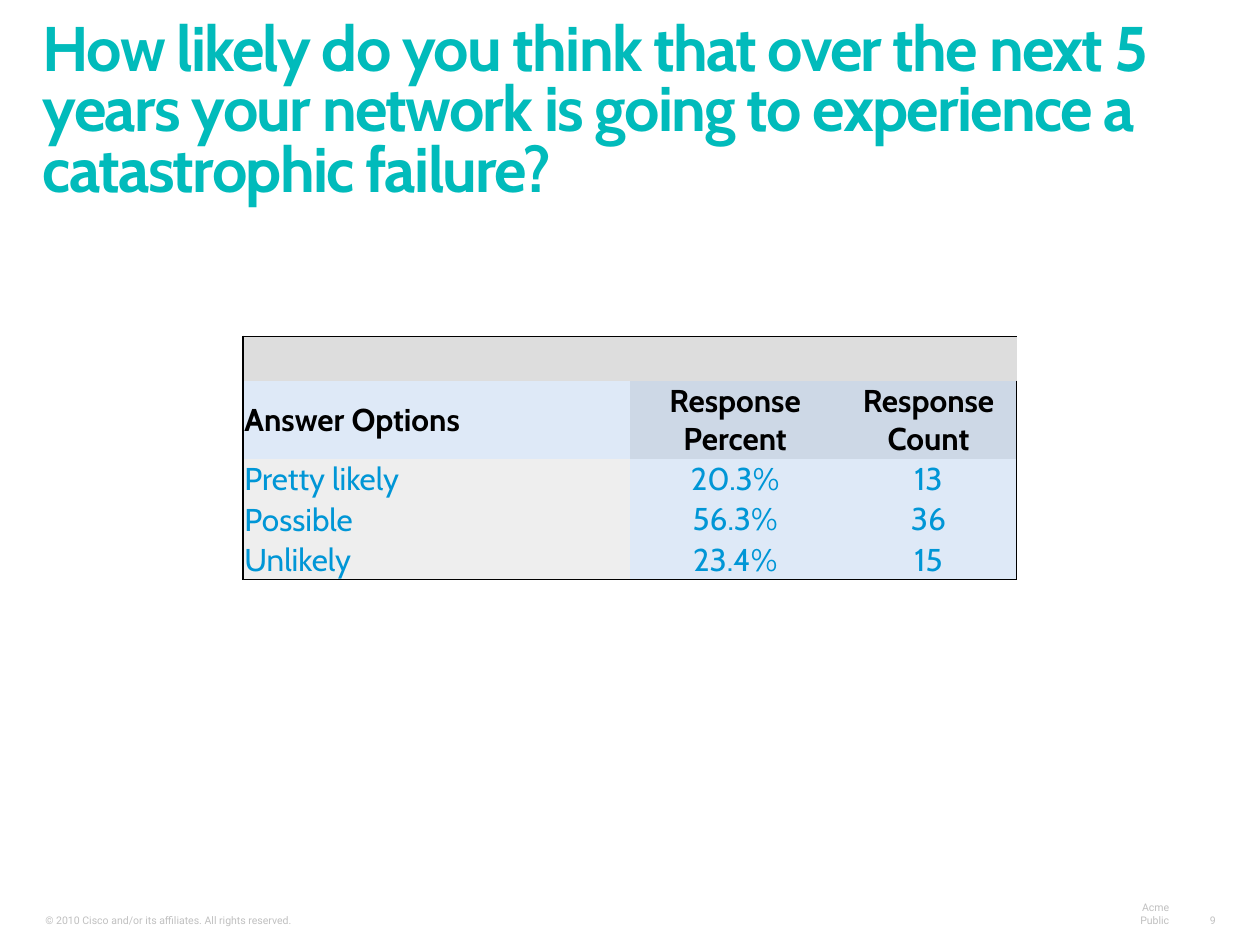
from pptx import Presentation
from pptx.dml.color import RGBColor
from pptx.enum.text import MSO_ANCHOR, PP_ALIGN
from pptx.oxml.ns import qn
from pptx.util import Inches, Pt
from lxml import etree

BOTTOM, MIDDLE = MSO_ANCHOR.BOTTOM, MSO_ANCHOR.MIDDLE
LEFT, CENTER, RIGHT = PP_ALIGN.LEFT, PP_ALIGN.CENTER, PP_ALIGN.RIGHT

TEAL = RGBColor(0x01, 0xBB, 0xBB)
BLUE = RGBColor(0x00, 0x96, 0xD6)
BLACK = RGBColor(0x00, 0x00, 0x00)
SILVER = RGBColor(0xC0, 0xC0, 0xC0)
BAND_GRAY = RGBColor(0xDD, 0xDD, 0xDD)
LABEL_GRAY = RGBColor(0xEE, 0xEE, 0xEE)
PALE_BLUE = RGBColor(0xDE, 0xE9, 0xF7)
HEADER_BLUE = RGBColor(0xCD, 0xD8, 0xE6)

TITLE = ("How likely do you think that over the next 5 years your network "
         "is going to experience a catastrophic failure?")
TITLE_FONT = {"name": "Cabin", "size": Pt(36), "bold": True}
FOOTER_FONT = {"name": "Roboto", "size": Pt(6)}
HEADER_FONT = {"name": "Cabin", "size": Pt(18), "bold": True}
BODY_FONT = {**HEADER_FONT, "bold": False}

FOOTERS = [
    (0.27, 3.6, "© 2010 Cisco and/or its affiliates. All rights reserved.", LEFT, True),
    (8.73, 0.64, "Acme Public", RIGHT, False),
    (9.46, 0.28, "9", RIGHT, False),
]
COLUMN_WIDTHS = [3.07, 1.67, 1.4]
ROW_HEIGHTS = [0.35, 0.62, 0.32, 0.32, 0.32]
ROWS = [
    ("", "", ""),
    ("Answer Options", "Response Percent", "Response Count"),
    ("Pretty likely", "20.3%", "13"),
    ("Possible", "56.3%", "36"),
    ("Unlikely", "23.4%", "15"),
]


def write(para, text, font_format, color, align=LEFT):
    para.alignment = align
    span = para.add_run()
    span.text = text
    for name, value in font_format.items():
        setattr(span.font, name, value)
    span.font.color.rgb = color
    return span


def add_text(page, place, text, font_format, color, align=LEFT, wrap=True, inset=0.04):
    box = page.shapes.add_textbox(*map(Inches, place))
    frame = box.text_frame
    frame_format = {
        "word_wrap": wrap, "vertical_anchor": BOTTOM,
        "margin_left": Inches(0.09), "margin_right": Inches(0.09),
        "margin_top": Inches(inset), "margin_bottom": Inches(inset),
    }
    for name, value in frame_format.items():
        setattr(frame, name, value)
    para = frame.paragraphs[0]
    return para, write(para, text, font_format, color, align)


def add_title(page):
    para, span = add_text(page, (0.25, 0.75, 9.39, 0.92), TITLE, TITLE_FONT, TEAL, inset=0.05)
    para.line_spacing = 0.8
    span.font._element.set("spc", "-100")


def add_footers(page):
    for left, width, text, align, wrap in FOOTERS:
        add_text(page, (left, 7.2, width, 0.19), text, FOOTER_FONT, SILVER, align, wrap)


def set_borders(cell, outer_sides):
    """Draw a black line on the outer sides and none on the others."""
    properties = cell._tc.get_or_add_tcPr()
    for side in "LRTB":
        line = etree.SubElement(properties, qn(f"a:ln{side}"), w=str(Pt(1)))
        if side in outer_sides:
            fill = etree.SubElement(line, qn("a:solidFill"))
            etree.SubElement(fill, qn("a:srgbClr"), val=str(BLACK))
        else:
            etree.SubElement(line, qn("a:noFill"))


def cell_fill(row, column):
    if row == 0:
        return BAND_GRAY
    if row == 1:
        return HEADER_BLUE if column else PALE_BLUE
    return PALE_BLUE if column else LABEL_GRAY


def format_cell(cell, row, column, text):
    edges = {"L": column == 0, "R": column == len(COLUMN_WIDTHS) - 1,
             "T": row == 0, "B": row == len(ROWS) - 1}
    set_borders(cell, [side for side, is_outer in edges.items() if is_outer])
    cell.fill.solid()
    cell.fill.fore_color.rgb = cell_fill(row, column)
    cell_format = {
        "margin_left": Inches(0.01), "margin_right": Inches(0.01),
        "margin_top": Inches(0.01), "margin_bottom": 0,
        "vertical_anchor": BOTTOM if row > 1 and column == 0 else MIDDLE,
    }
    for name, value in cell_format.items():
        setattr(cell, name, value)
    if text:
        font_format, color = (HEADER_FONT, BLACK) if row == 1 else (BODY_FONT, BLUE)
        write(cell.text_frame.paragraphs[0], text, font_format, color,
              CENTER if column else LEFT)


def add_response_table(page):
    place = (1.93, 2.67, sum(COLUMN_WIDTHS), sum(ROW_HEIGHTS))
    table = page.shapes.add_table(len(ROWS), len(COLUMN_WIDTHS), *map(Inches, place)).table
    table.first_row = table.horz_banding = False
    for column, width in zip(table.columns, COLUMN_WIDTHS):
        column.width = Inches(width)
    for row, height in zip(table.rows, ROW_HEIGHTS):
        row.height = Inches(height)
    for row, texts in enumerate(ROWS):
        for column, text in enumerate(texts):
            format_cell(table.cell(row, column), row, column, text)
    table.cell(0, 0).merge(table.cell(0, len(COLUMN_WIDTHS) - 1))


def main():
    deck = Presentation()
    deck.slide_width, deck.slide_height = Inches(10), Inches(7.5)
    page = deck.slides.add_slide(deck.slide_layouts[6])
    add_footers(page)
    add_title(page)
    add_response_table(page)
    deck.save("out.pptx")


if __name__ == "__main__":
    main()
